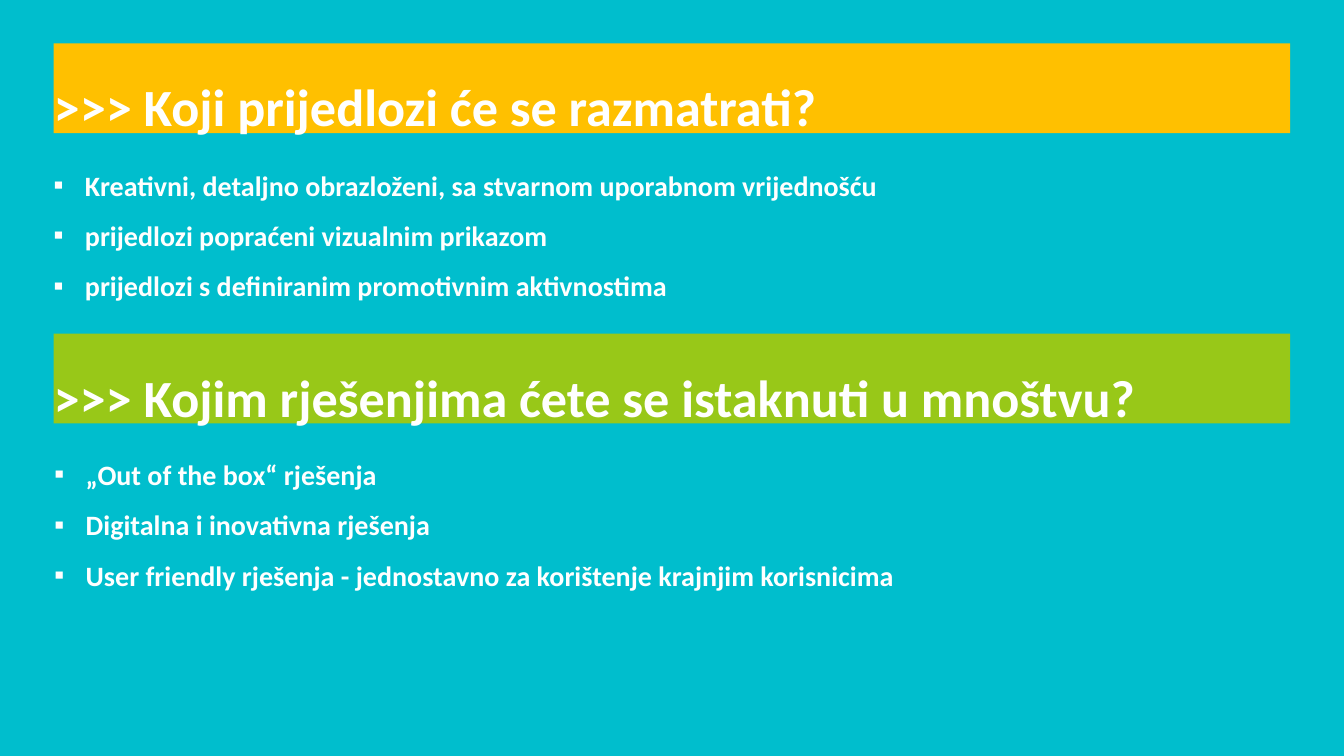
import pptx
import pptx.util
import pptx.dml.color
import pptx.enum.shapes
import pptx.enum.text
import lxml.etree
from pptx.oxml.ns import qn

Inches = pptx.util.Inches
RGBColor = pptx.dml.color.RGBColor

TURQUOISE = RGBColor(0x00, 0xBE, 0xCD)
AMBER = RGBColor(0xFF, 0xC0, 0x00)
GREEN = RGBColor(0x98, 0xC8, 0x18)
OFF_WHITE = RGBColor(0xFF, 0xFF, 0xFE)
WHITE = RGBColor(0xFF, 0xFF, 0xFF)

CONSIDERED_TITLE = ">>> Koji prijedlozi će se razmatrati?"
CONSIDERED_POINTS = [
    "Kreativni, detaljno obrazloženi, sa stvarnom uporabnom vrijednošću",
    "prijedlozi popraćeni vizualnim prikazom",
    "prijedlozi s definiranim promotivnim aktivnostima",
]
STANDOUT_TITLE = ">>> Kojim rješenjima ćete se istaknuti u mnoštvu?"
STANDOUT_POINTS = [
    "„Out of the box“ rješenja",
    "Digitalna i inovativna rješenja",
    "User friendly rješenja - jednostavno za korištenje krajnjim korisnicima",
]

SLIDE_WIDTH, SLIDE_HEIGHT = 13.33, 7.5
MARGIN = SLIDE_WIDTH * 0.04
BAND_WIDTH = SLIDE_WIDTH * 0.92
BAND_HEIGHT = 0.89
BAND_TOPS = (0.43, 3.31)
LIST_INSET = 0.05
BULLET_INDENT = 0.31


def place(shape, left, top, width, height):
    shape.left, shape.top = Inches(left), Inches(top)
    shape.width, shape.height = Inches(width), Inches(height)


def write_lines(shape, lines, size, color, bullet=None, insets=(0, 0)):
    """Fill a shape with bold, left-aligned lines at 1.5 spacing."""
    frame = shape.text_frame
    frame.text = "\n".join(lines)
    frame.word_wrap = True
    frame.auto_size = pptx.enum.text.MSO_AUTO_SIZE.NONE
    frame.vertical_anchor = pptx.enum.text.MSO_ANCHOR.TOP
    frame.margin_left = frame.margin_right = Inches(insets[0])
    frame.margin_top = frame.margin_bottom = Inches(insets[1])
    for paragraph in frame.paragraphs:
        paragraph.alignment = pptx.enum.text.PP_ALIGN.LEFT
        paragraph.line_spacing = 1.5
        paragraph.space_before = pptx.util.Pt(0)
        if bullet:
            properties = paragraph._p.get_or_add_pPr()
            properties.set("marL", str(Inches(BULLET_INDENT)))
            properties.set("indent", str(-Inches(BULLET_INDENT)))
            lxml.etree.SubElement(properties, qn("a:buFont"), typeface="Calibri")
            lxml.etree.SubElement(properties, qn("a:buChar"), char=bullet)
        font = paragraph.font
        font.name, font.size, font.bold = "Calibri", pptx.util.Pt(size), True
        font.color.rgb = color


def format_band(shape, top, title, color):
    place(shape, MARGIN, top, BAND_WIDTH, BAND_HEIGHT)
    shape.fill.solid()
    shape.fill.fore_color.rgb = color
    shape.line.fill.background()
    write_lines(shape, [title], 37.3, OFF_WHITE)


def main():
    presentation = pptx.Presentation()
    presentation.slide_width = Inches(SLIDE_WIDTH)
    presentation.slide_height = Inches(SLIDE_HEIGHT)
    two_content = presentation.slide_layouts.get_by_name("Two Content")
    slide = presentation.slides.add_slide(two_content)
    slide.background.fill.solid()
    slide.background.fill.fore_color.rgb = TURQUOISE

    title, considered_list, standout_list = list(slide.placeholders)[:3]
    format_band(title, BAND_TOPS[0], CONSIDERED_TITLE, AMBER)
    place(considered_list, MARGIN, 1.5, 12.45, 4.82)
    write_lines(considered_list, CONSIDERED_POINTS, 20, OFF_WHITE, "▪")

    standout_band = slide.shapes.add_shape(
        pptx.enum.shapes.MSO_SHAPE.RECTANGLE, 0, 0, 0, 0)
    standout_band.shadow.inherit = False
    format_band(standout_band, BAND_TOPS[1], STANDOUT_TITLE, GREEN)
    place(standout_list, 0.44, 4.32, BAND_WIDTH, 1.56)
    write_lines(standout_list, STANDOUT_POINTS, 20, WHITE, "▪",
                insets=(2 * LIST_INSET, LIST_INSET))

    presentation.save("out.pptx")


if __name__ == "__main__":
    main()
